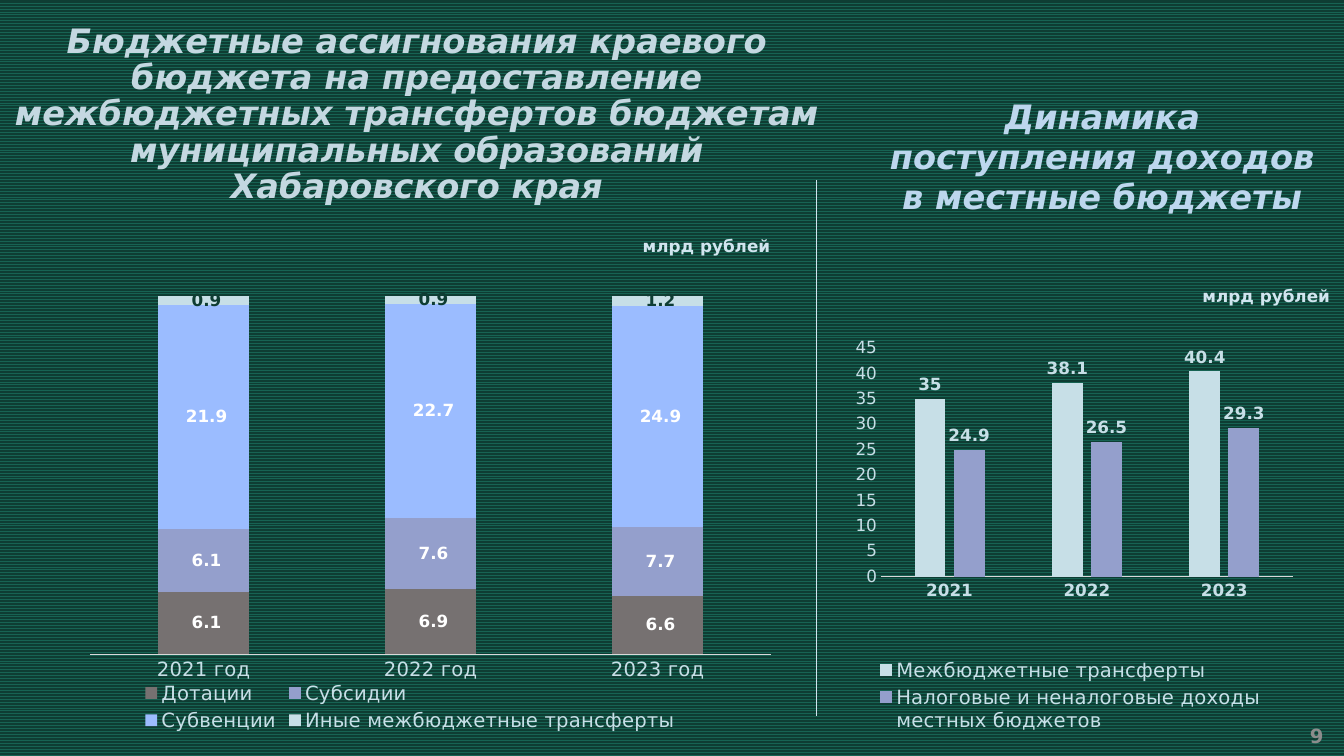
from dataclasses import dataclass

import lxml.etree
import pptx
import pptx.chart.data
import pptx.dml.color
import pptx.enum.chart
import pptx.enum.dml
import pptx.enum.shapes
import pptx.enum.text
import pptx.oxml
import pptx.oxml.ns
import pptx.util

Pt = pptx.util.Pt
ALIGN = pptx.enum.text.PP_ALIGN
ANCHOR = pptx.enum.text.MSO_ANCHOR
CHART_TYPE = pptx.enum.chart.XL_CHART_TYPE
LABEL_POSITION = pptx.enum.chart.XL_LABEL_POSITION
FONT = "DejaVu Sans"
PALE = "C7DFE7"
LAVENDER = "949FCC"
LIGHT = "D1E5EF"
ONE_DECIMAL = r"#\ ##0.0"


@dataclass(frozen=True)
class Box:
    left: float
    top: float
    width: float
    height: float


@dataclass(frozen=True)
class Label:
    text: str
    box: Box
    size: float
    color: str
    italic: bool = False
    align: ALIGN = ALIGN.CENTER
    anchor: ANCHOR = ANCHOR.TOP
    spacing: float = 1.0


@dataclass(frozen=True)
class Series:
    name: str
    values: tuple[float, ...]
    color: str
    label_color: str


@dataclass(frozen=True)
class ColumnChart:
    kind: CHART_TYPE
    box: Box
    plot: tuple[float, float, float, float]
    categories: tuple[str, ...]
    series: tuple[Series, ...]
    gap: int
    overlap: int
    number_format: str
    label_position: LABEL_POSITION
    category_size: float
    category_bold: bool
    scale_maximum: float | None = None


TITLE = Label(
    "Бюджетные ассигнования краевого бюджета на предоставление межбюджетных "
    "трансфертов бюджетам муниципальных образований Хабаровского края",
    Box(0, 13.7, 595.4, 138.2), 24, "C4D8E1", italic=True, spacing=0.9)

LABELS = (
    Label("Динамика поступления доходов в местные бюджеты",
          Box(622, 64.8, 330.5, 93.6), 24, "BDD7EE", italic=True),
    Label("млрд рублей", Box(449.2, 164.9, 111, 21.6), 12, LIGHT),
    Label("млрд рублей", Box(849, 200.2, 111, 21.6), 12, LIGHT),
    Label("9", Box(736.6, 511.2, 216, 28.8), 14, "8C8C8C",
          align=ALIGN.RIGHT, anchor=ANCHOR.MIDDLE),
)

CHARTS = (
    ColumnChart(
        CHART_TYPE.COLUMN_STACKED_100, Box(0, 201.6, 586, 324),
        (0.11, 0.03, 0.83, 0.79), ("2021 год", "2022 год", "2023 год"),
        (Series("Дотации", (6.1, 6.9, 6.6), "767171", "FFFFFF"),
         Series("Субсидии", (6.1, 7.6, 7.7), LAVENDER, "FFFFFF"),
         Series("Субвенции", (21.9, 22.7, 24.9), "9BBCFF", "FFFFFF"),
         Series("Иные межбюджетные трансферты", (0.9, 0.9, 1.2), PALE, "0E3D33")),
        150, 100, ONE_DECIMAL, LABEL_POSITION.CENTER, 14, False),
    ColumnChart(
        CHART_TYPE.COLUMN_CLUSTERED, Box(595.4, 234, 338.4, 291.6),
        (0.1, 0.05, 0.87, 0.56), ("2021", "2022", "2023"),
        (Series("Межбюджетные трансферты", (35, 38.1, 40.4), PALE, PALE),
         Series("Налоговые и неналоговые доходы местных бюджетов",
                (24.9, 26.5, 29.3), LAVENDER, PALE)),
        219, -27, "General", LABEL_POSITION.OUTSIDE_END, 12, True, 45),
)


def rgb(color: str) -> pptx.dml.color.RGBColor:
    return pptx.dml.color.RGBColor.from_string(color)


def format_font(font, size: float, color: str, bold: bool = False, italic: bool = False) -> None:
    font.name = FONT
    font.size = Pt(size)
    font.bold = bold
    font.italic = italic
    font.color.rgb = rgb(color)


def bounds(box: Box) -> tuple:
    return Pt(box.left), Pt(box.top), Pt(box.width), Pt(box.height)


def fill_label(shape, label: Label) -> None:
    shape.left, shape.top, shape.width, shape.height = bounds(label.box)
    frame = shape.text_frame
    frame.text = label.text
    frame.word_wrap = True
    frame.auto_size = pptx.enum.text.MSO_AUTO_SIZE.NONE
    frame.vertical_anchor = label.anchor
    paragraph = frame.paragraphs[0]
    paragraph.alignment = label.align
    paragraph.line_spacing = label.spacing
    format_font(paragraph.font, label.size, label.color, True, label.italic)


def place_plot(chart, plot: tuple[float, float, float, float]) -> None:
    area = chart.plots[0]._element.getparent()
    for old in area.findall(pptx.oxml.ns.qn("c:layout")):
        area.remove(old)
    layout = lxml.etree.Element(pptx.oxml.ns.qn("c:layout"))
    manual = lxml.etree.SubElement(layout, pptx.oxml.ns.qn("c:manualLayout"))
    settings = [("layoutTarget", "inner"), ("xMode", "edge"), ("yMode", "edge")]
    settings += zip("xywh", map(str, plot))
    for name, value in settings:
        lxml.etree.SubElement(manual, pptx.oxml.ns.qn(f"c:{name}")).set("val", value)
    area.insert(0, layout)


def add_column_chart(slide, spec_chart: ColumnChart) -> None:
    data = pptx.chart.data.CategoryChartData(number_format=spec_chart.number_format)
    data.categories = spec_chart.categories
    for item in spec_chart.series:
        data.add_series(item.name, item.values)
    chart = slide.shapes.add_chart(spec_chart.kind, *bounds(spec_chart.box), data).chart
    format_font(chart.font, 12, PALE)
    chart.has_title = False
    chart.has_legend = True
    chart.legend.position = pptx.enum.chart.XL_LEGEND_POSITION.BOTTOM
    chart.legend.include_in_layout = False
    format_font(chart.legend.font, 14, PALE)
    place_plot(chart, spec_chart.plot)

    plot = chart.plots[0]
    plot.gap_width = spec_chart.gap
    plot.overlap = spec_chart.overlap
    plot.vary_by_categories = False
    for series, item in zip(plot.series, spec_chart.series):
        series.format.fill.solid()
        series.format.fill.fore_color.rgb = rgb(item.color)
        labels = series.data_labels
        labels.show_value = True
        labels.number_format = spec_chart.number_format
        labels.number_format_is_linked = False
        labels.position = spec_chart.label_position
        format_font(labels.font, 12, item.label_color, True)

    category_axis, value_axis = chart.category_axis, chart.value_axis
    for axis in (category_axis, value_axis):
        axis.major_tick_mark = pptx.enum.chart.XL_TICK_MARK.NONE
        axis.has_major_gridlines = False
    category_axis.format.line.color.rgb = rgb("D9D9D9")
    category_axis.format.line.width = Pt(0.75)
    format_font(category_axis.tick_labels.font, spec_chart.category_size, PALE,
                spec_chart.category_bold)
    if spec_chart.scale_maximum is None:
        value_axis.visible = False
    else:
        value_axis.minimum_scale = 0
        value_axis.maximum_scale = spec_chart.scale_maximum
        value_axis.major_unit = 5
        value_axis.format.line.fill.background()
        format_font(value_axis.tick_labels.font, 12, PALE)


def add_divider(slide) -> None:
    divider = slide.shapes.add_connector(
        pptx.enum.shapes.MSO_CONNECTOR.STRAIGHT, Pt(583.2), Pt(128.9), Pt(583.2), Pt(511.2))
    divider.line.color.rgb = rgb(LIGHT)
    divider.line.width = Pt(0.5)
    lxml.etree.SubElement(divider._element.spPr, pptx.oxml.ns.qn("a:effectLst"))


def main() -> None:
    presentation = pptx.Presentation()
    presentation.slide_width, presentation.slide_height = Pt(960), Pt(540)
    slide = presentation.slides.add_slide(presentation.slide_layouts[5])
    background = slide.background.fill
    background.patterned()
    background.pattern = pptx.enum.dml.MSO_PATTERN.ZIG_ZAG
    background.fore_color.rgb = rgb("176353")
    background.back_color.rgb = rgb("0E3D33")
    fill_label(slide.shapes.title, TITLE)
    add_divider(slide)
    for column_chart in CHARTS:
        add_column_chart(slide, column_chart)
    for label in LABELS:
        fill_label(slide.shapes.add_textbox(*bounds(label.box)), label)
    presentation.save("out.pptx")


if __name__ == "__main__":
    main()
